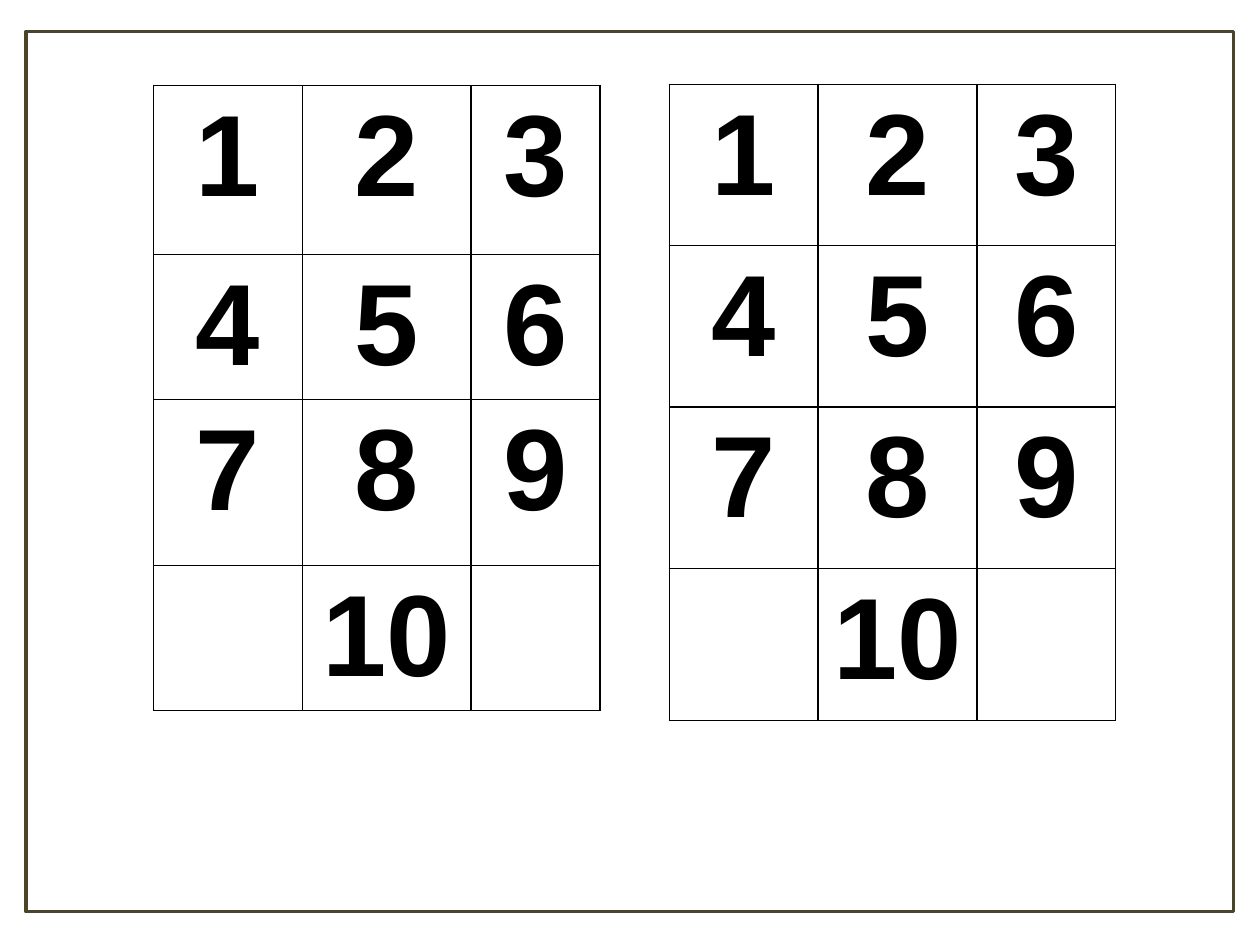
from lxml import etree
from pptx import Presentation
from pptx.dml.color import RGBColor
from pptx.enum.shapes import MSO_SHAPE
from pptx.enum.text import PP_ALIGN
from pptx.oxml.ns import qn
from pptx.util import Pt

RECTANGLE = MSO_SHAPE.RECTANGLE
CENTER = PP_ALIGN.CENTER
BLACK, WHITE, OLIVE = "000000", "FFFFFF", "4A452A"
NUMBERS = [
    ["1", "2", "3"],
    ["4", "5", "6"],
    ["7", "8", "9"],
    ["", "10", ""],
]


def color(value):
    """Return the colour for a hex string."""
    return RGBColor.from_string(value)


def add_frame(page, left, top, width, height):
    """Draw the unfilled border around the page."""
    frame = page.shapes.add_shape(RECTANGLE, Pt(left), Pt(top), Pt(width), Pt(height))
    frame.shadow.inherit = False
    frame.fill.background()
    frame.line.color.rgb = color(OLIVE)
    frame.line.width = Pt(2)


def add_borders(cell):
    """Give all four sides of a cell a thin black line."""
    properties = cell._tc.get_or_add_tcPr()
    for side in ("a:lnL", "a:lnR", "a:lnT", "a:lnB"):
        line = etree.SubElement(properties, qn(side), w=str(Pt(1)))
        fill = etree.SubElement(line, qn("a:solidFill"))
        etree.SubElement(fill, qn("a:srgbClr"), val=BLACK)


def style_cell(cell, text):
    """Write one large centred number into a white cell."""
    add_borders(cell)
    cell.fill.solid()
    cell.fill.fore_color.rgb = color(WHITE)
    cell.margin_left = cell.margin_right = Pt(5)
    cell.margin_top = cell.margin_bottom = Pt(3.6)
    if text:
        cell.text = text
        para = cell.text_frame.paragraphs[0]
        para.alignment = CENTER
        para.font.name = "Arial"
        para.font.size = Pt(66)
        para.font.bold = True
        para.font.color.rgb = color(BLACK)


def add_number_table(page, left, top, widths, heights):
    """Add a table of the numbers one to ten."""
    table = page.shapes.add_table(
        len(heights), len(widths), Pt(left), Pt(top), Pt(sum(widths)), Pt(sum(heights))
    ).table
    table.first_row = table.horz_banding = False
    for column, width in zip(table.columns, widths):
        column.width = Pt(width)
    for row, height, texts in zip(table.rows, heights, NUMBERS):
        row.height = Pt(height)
        for cell, text in zip(row.cells, texts):
            style_cell(cell, text)


def main():
    """Build the slide with its frame and two number tables."""
    deck = Presentation()
    deck.slide_width, deck.slide_height = Pt(720), Pt(540)
    page = deck.slides.add_slide(deck.slide_layouts[6])
    add_frame(page, 15, 18, 690, 503)
    add_number_table(page, 87.8, 48.9, [85, 96.5, 73.5], [96.5, 82.8, 95, 82.8])
    add_number_table(page, 382.5, 48.2, [85, 90.7, 79.3], [92.2, 92.2, 92.2, 87])
    deck.save("out.pptx")


if __name__ == "__main__":
    main()
